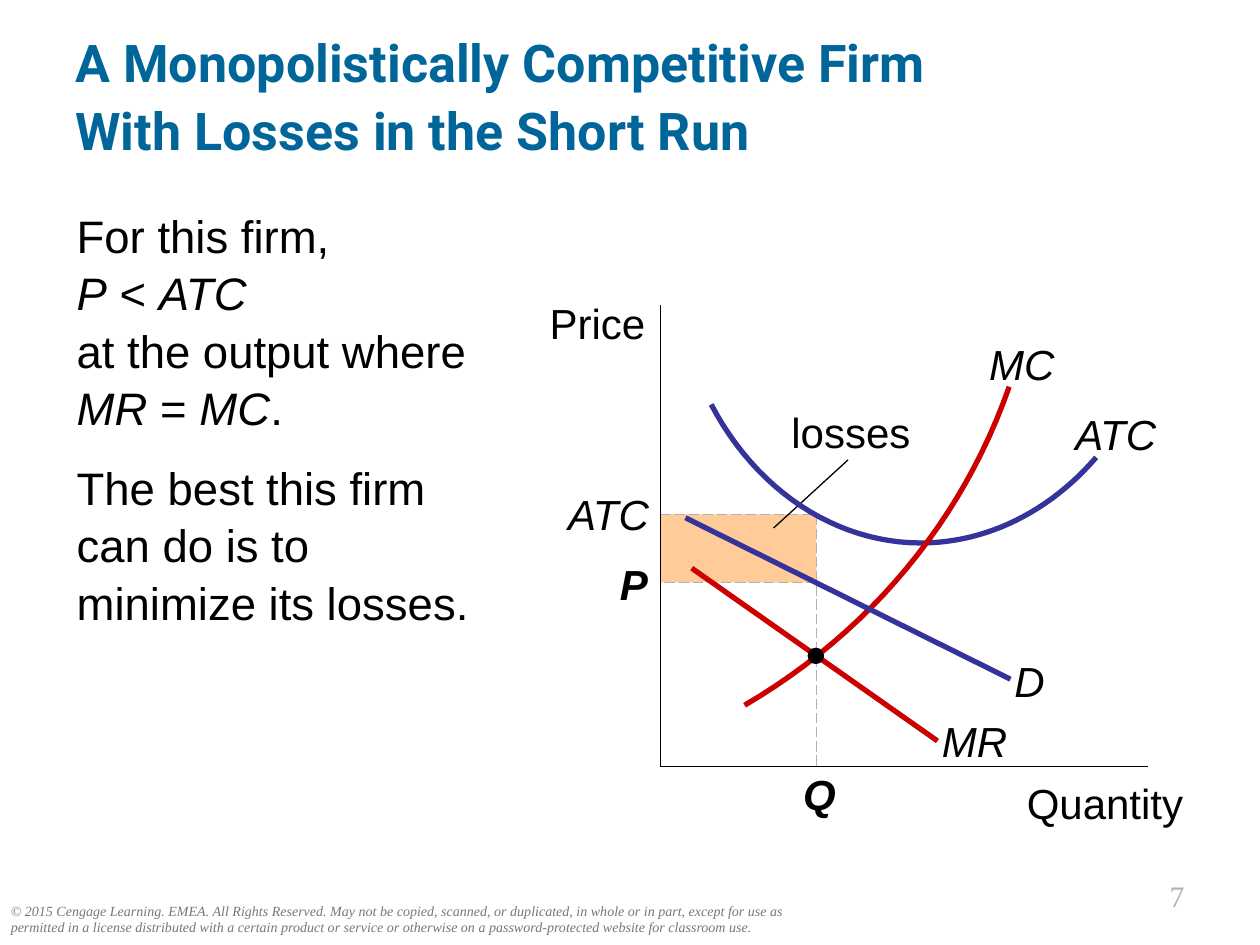
from dataclasses import dataclass

from lxml import etree
from pptx import Presentation
from pptx.dml.color import RGBColor
from pptx.enum.dml import MSO_LINE
from pptx.enum.shapes import MSO_CONNECTOR, MSO_SHAPE
from pptx.enum.text import MSO_ANCHOR, PP_ALIGN
from pptx.oxml.ns import qn
from pptx.util import Pt

LEFT, CENTER, RIGHT = PP_ALIGN.LEFT, PP_ALIGN.CENTER, PP_ALIGN.RIGHT
TOP, MIDDLE = MSO_ANCHOR.TOP, MSO_ANCHOR.MIDDLE
STRAIGHT = MSO_CONNECTOR.STRAIGHT
RECTANGLE, OVAL = MSO_SHAPE.RECTANGLE, MSO_SHAPE.OVAL
LONG_DASH = MSO_LINE.LONG_DASH


@dataclass(frozen=True)
class Theme:
    black: str = "000000"
    title: str = "006699"
    blue: str = "333399"
    red: str = "CC0000"
    losses: str = "FFCC99"
    guide: str = "B2B2B2"
    footer: str = "777777"
    title_size: float = 29.7
    body_size: float = 26
    label_size: float = 24
    number_size: float = 17
    footer_size: float = 8
    thin: float = 0.75
    thick: float = 3
    heading_font: str = "Roboto"
    body_font: str = "Arial"
    footer_font: str = "Times New Roman"


theme = Theme()
presentation = Presentation()
presentation.slide_width, presentation.slide_height = Pt(720), Pt(540)
slide = presentation.slides.add_slide(presentation.slide_layouts[6])
shapes = slide.shapes


def add_text(text, box, size=theme.label_size, font=theme.body_font, color=theme.black,
             bold=False, italic=False, align=LEFT, anchor=TOP, inset=True, wrap=True,
             line_spacing=1.0, gap=0):
    frame = shapes.add_textbox(*map(Pt, box)).text_frame
    frame.word_wrap = wrap
    frame.vertical_anchor = anchor
    if not inset:
        frame.margin_left = frame.margin_top = frame.margin_right = frame.margin_bottom = 0
    for index, content in enumerate(text.split("\n")):
        paragraph = frame.add_paragraph() if index else frame.paragraphs[0]
        paragraph.alignment = align
        paragraph.line_spacing = line_spacing
        if index:
            paragraph.space_before = Pt(gap)
        for part, chunk in enumerate(content.split("*")):
            for row, line in enumerate(chunk.split("\v")):
                if row:
                    paragraph.add_line_break()
                if line:
                    run = paragraph.add_run()
                    run.text = line
                    run.font.size, run.font.name = Pt(size), font
                    run.font.bold = bold
                    run.font.italic = italic or part % 2 == 1
                    run.font.color.rgb = RGBColor.from_string(color)


def add_line(start, end, color=theme.black, width=theme.thin, dash=None):
    line = shapes.add_connector(STRAIGHT, *map(Pt, (*start, *end)))
    line.line.color.rgb = RGBColor.from_string(color)
    line.line.width = Pt(width)
    if dash:
        line.line.dash_style = dash
    etree.SubElement(line._element.spPr, qn("a:effectLst"))


axis_x, axis_y = 377.3, 438
quantity_x, cost_y, price_y = 466.6, 293.9, 332.8

add_text("© 2015 Cengage Learning. EMEA. All Rights Reserved. May not be copied, scanned, "
         "or duplicated, in whole or in part, except for use as permitted in a license "
         "distributed with a certain product or service or otherwise on a "
         "password-protected website for classroom use.",
         (-0.9, 512, 463, 27), size=theme.footer_size, font=theme.footer_font,
         color=theme.footer, italic=True)
add_text("7", (594, 498.2, 90, 28), size=theme.number_size, font=theme.footer_font,
         color=theme.guide, align=RIGHT)
add_text("A Monopolistically Competitive Firm\vWith Losses in the Short Run",
         (36, 20.2, 648, 65.5), size=theme.title_size, font=theme.heading_font,
         color=theme.title, bold=True, anchor=MIDDLE, line_spacing=1.1)
add_text("For this firm,\v*P* < *ATC*\vat the output where *MR* = *MC*.\n"
         "The best this firm can do is to minimize its losses.",
         (36.7, 113.8, 245.5, 358), size=theme.body_size, line_spacing=1.05, gap=13)

losses_area = (RECTANGLE, axis_x, cost_y, quantity_x - axis_x, price_y - cost_y, theme.losses)
optimum_dot = (OVAL, 461.5, 370.1, 9.4, 9.4, theme.black)

for preset, left, top, width, height, color in (losses_area, optimum_dot):
    shape = shapes.add_shape(preset, Pt(left), Pt(top), Pt(width), Pt(height))
    shape.shadow.inherit = False
    shape.fill.solid()
    shape.fill.fore_color.rgb = RGBColor.from_string(color)
    shape.line.fill.background()
dot = shape

for start, end in (
    ((axis_x, cost_y), (quantity_x, cost_y)),
    ((quantity_x, cost_y), (quantity_x, axis_y)),
    ((quantity_x, price_y), (axis_x, price_y)),
):
    add_line(start, end, color=theme.guide, dash=LONG_DASH)
add_line((442.1, 301.7), (484.6, 262.8))
add_line((axis_x, 174.2), (axis_x, axis_y))
add_line((axis_x, axis_y), (656, axis_y))

atc_curve = [
    ((626.4, 261.4), (599.8, 292.3), (563.8, 310.3), (526.3, 310.3)),
    ((526.3, 310.3), (477.4, 310.3), (432, 280.1), (406.4, 231.1)),
]
mc_curve = [((425.5, 403), (496.8, 361.4), (550.1, 297.4), (576.7, 221))]
STEPS = 24

for segments, color in ((atc_curve, theme.blue), (mc_curve, theme.red)):
    points = []
    for segment in segments:
        for step in range(STEPS + 1):
            t = step / STEPS
            weights = ((1 - t) ** 3, 3 * t * (1 - t) ** 2, 3 * t * t * (1 - t), t ** 3)
            points.append(tuple(
                Pt(sum(weight * value for weight, value in zip(weights, values)))
                for values in zip(*segment)))
    builder = shapes.build_freeform(*points[0])
    builder.add_line_segments(points[1:], close=False)
    curve = builder.convert_to_shape()
    curve.shadow.inherit = False
    curve.fill.background()
    curve.line.color.rgb = RGBColor.from_string(color)
    curve.line.width = Pt(theme.thick)

add_line((391.7, 295.9), (577.4, 388.1), color=theme.blue, width=theme.thick)
add_line((395.3, 324.7), (535.7, 423.4), color=theme.red, width=theme.thick)

add_text("losses", (440.6, 229, 91.4, 36), align=CENTER)
add_text("Price", (252.7, 166.3, 123.1, 36), align=RIGHT)
add_text("Quantity", (579.6, 444.2, 96.5, 28.8), align=RIGHT, inset=False)
add_text("Q", (447.8, 435.6, 41, 36), bold=True, italic=True, align=CENTER)
add_text("P", (354.2, 319, 15.8, 28.8), bold=True, italic=True, align=RIGHT,
         inset=False, wrap=False)
add_text("ATC", (317.5, 279.4, 53.3, 28.8), italic=True, align=RIGHT, inset=False)

for label, left, top, width in (
    ("ATC", 604.8, 233.3, 65.5),
    ("MC", 560.9, 193.7, 46.1),
    ("D", 571, 374.4, 34.6),
    ("MR", 533.5, 409, 46.8),
):
    add_text(label, (left, top, width, 28.8), italic=True, align=CENTER, inset=False)

shapes._spTree.append(dot._element)
presentation.save("out.pptx")
